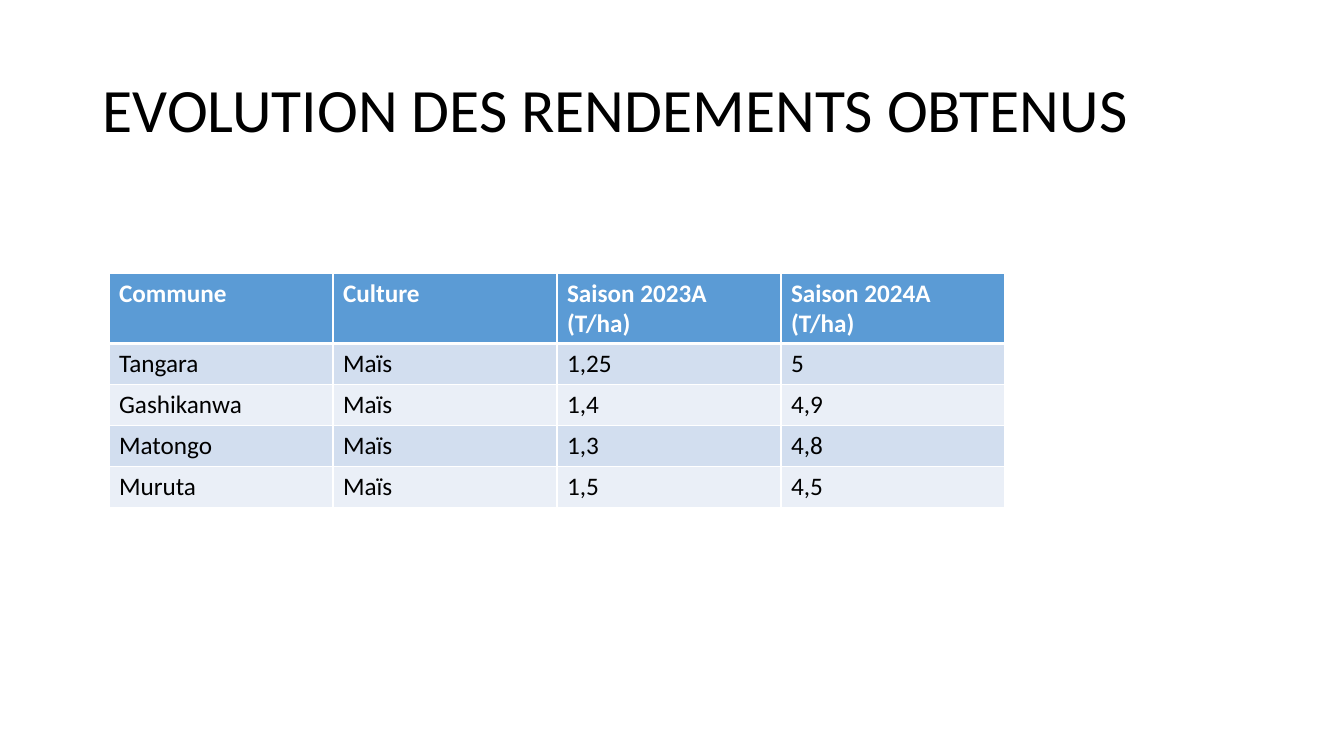
from lxml.etree import SubElement
from pptx import Presentation
from pptx.dml.color import RGBColor
from pptx.enum.text import MSO_ANCHOR
from pptx.oxml.ns import qn
from pptx.util import Pt

PX = 914400 / 100.8


def px(*lengths):
    return [round(n * PX) for n in lengths]


def rgb(color):
    return RGBColor.from_string(color)


prs = Presentation()
prs.slide_width, prs.slide_height = px(1344, 756)
s = prs.slides.add_slide(prs.slide_layouts[6])

title = s.shapes.add_textbox(*px(93, 40, 1159, 146))
tf = title.text_frame
tf.word_wrap = True
tf.vertical_anchor = MSO_ANCHOR.MIDDLE
p = tf.paragraphs[0]
p.text = "EVOLUTION DES RENDEMENTS OBTENUS"
p.line_spacing = 0.9
p.font.name = "Calibri"
p.font.size = Pt(44)
p.font.color.rgb = rgb("000000")

yields = [
    ("Commune", "Culture", "Saison 2023A (T/ha)", "Saison 2024A (T/ha)"),
    ("Tangara", "Maïs", "1,25", "5"),
    ("Gashikanwa", "Maïs", "1,4", "4,9"),
    ("Matongo", "Maïs", "1,3", "4,8"),
    ("Muruta", "Maïs", "1,5", "4,5"),
]
table = s.shapes.add_table(len(yields), 4, *px(109, 273, 896, 234)).table
for column in table.columns:
    column.width = px(224)[0]

for i, values in enumerate(yields):
    header = i == 0
    table.rows[i].height = px(70 if header else 41)[0]
    fill = "5B9BD5" if header else ("EAEFF7", "D2DEEF")[i % 2]
    borders = {"L": 1, "R": 1, "T": 3 if i == 1 else 1, "B": 3 if header else 1}
    for j, value in enumerate(values):
        cell = table.cell(i, j)
        tcPr = cell._tc.get_or_add_tcPr()
        for side, width in borders.items():
            ln = SubElement(tcPr, qn(f"a:ln{side}"), w=str(Pt(width)))
            SubElement(SubElement(ln, qn("a:solidFill")), qn("a:srgbClr"), val="FFFFFF")
        cell.fill.solid()
        cell.fill.fore_color.rgb = rgb(fill)
        p = cell.text_frame.paragraphs[0]
        p.text = value
        p.font.name = "Calibri"
        p.font.size = Pt(18)
        p.font.bold = header
        p.font.color.rgb = rgb("FFFFFF" if header else "000000")

prs.save("out.pptx")
